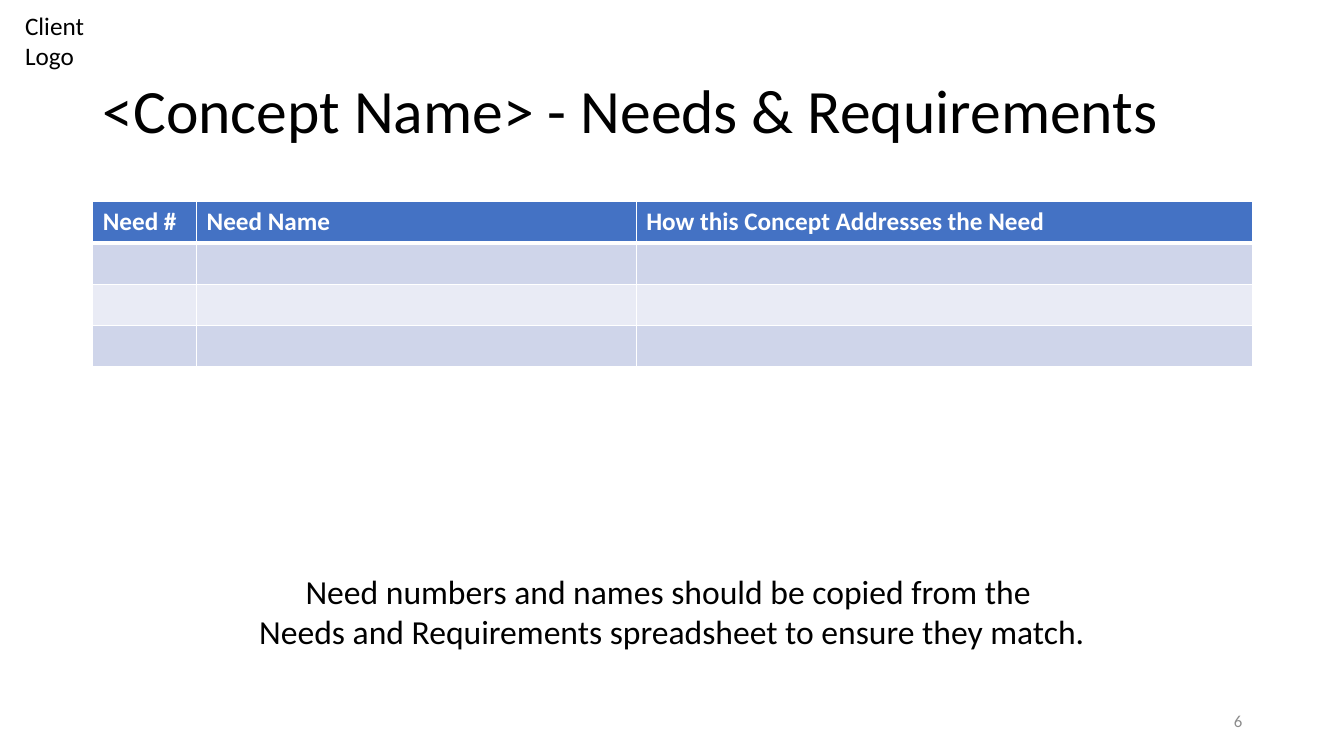
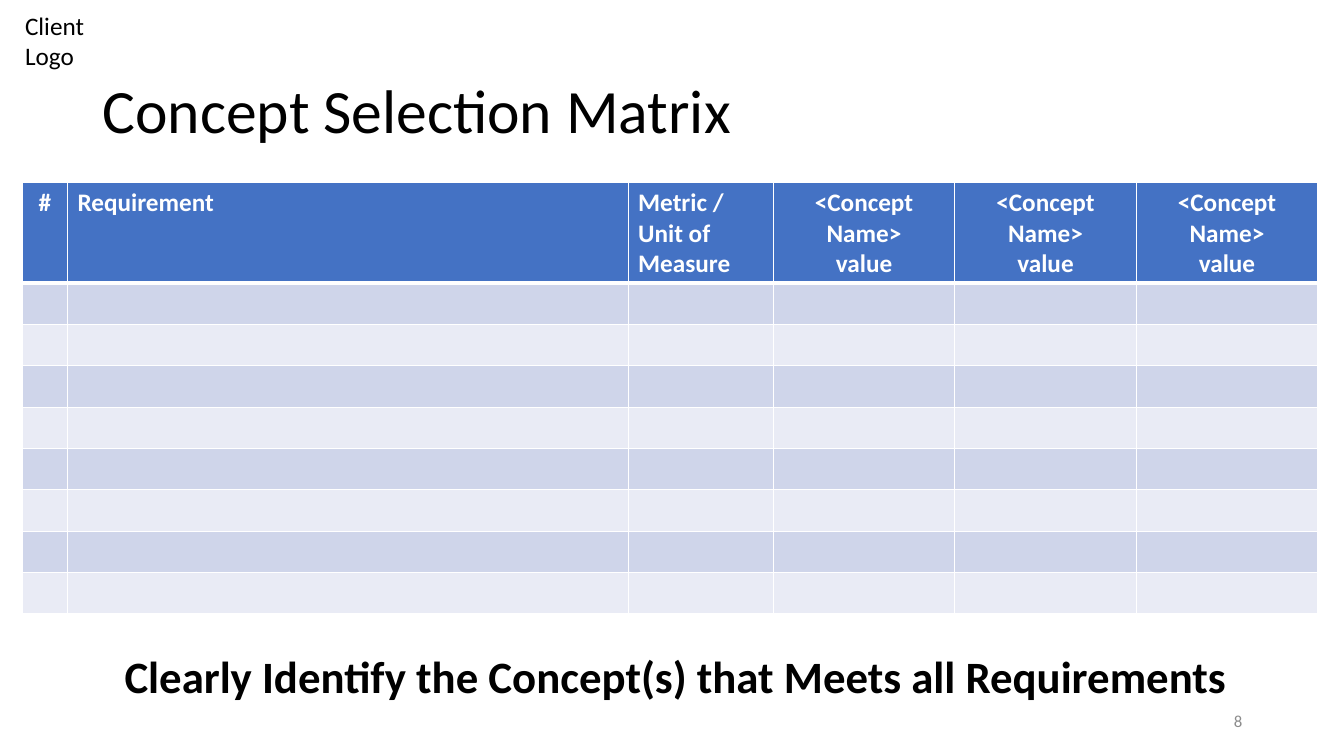
from lxml import etree
from pptx import Presentation
from pptx import util as u
from pptx.dml.color import RGBColor
from pptx.enum import text
from pptx.oxml.ns import qn

BLACK, WHITE, GREY = "000000", "FFFFFF", "8C8C8C"
HEADER, BANDS = "4472C4", ("CFD5EA", "E9EBF5")
FONT = "Calibri"
ROW_HEIGHT = 0.41
LEFT, CENTER, RIGHT = (text.PP_ALIGN.LEFT, text.PP_ALIGN.CENTER,
                       text.PP_ALIGN.RIGHT)
TOP, MIDDLE = text.MSO_ANCHOR.TOP, text.MSO_ANCHOR.MIDDLE


def rgb(color):
    return RGBColor.from_string(color)


def write(tf, content, size=18, color=BLACK, bold=False, align=LEFT,
          line_spacing=None):
    """Fill a text frame; \\n starts a paragraph, \\v breaks a line."""
    for i, line in enumerate(content.split("\n")):
        p = tf.add_paragraph() if i else tf.paragraphs[0]
        p.text = line
        p.alignment = align
        p.line_spacing = line_spacing
        for r in p.runs:
            r.font.name, r.font.size, r.font.bold = FONT, u.Pt(size), bold
            r.font.color.rgb = rgb(color)


def set_borders(cell, **widths):
    """Draw white cell borders; widths in points, keyed by side."""
    tcPr = cell._tc.get_or_add_tcPr()
    for side in ("L", "R", "T", "B"):
        ln = etree.SubElement(tcPr, qn("a:ln" + side),
                              w=str(u.Pt(widths.get(side, 1))))
        fill = etree.SubElement(ln, qn("a:solidFill"))
        etree.SubElement(fill, qn("a:srgbClr"), val=WHITE)


class Deck:
    def __init__(self):
        self.prs = Presentation()
        self.prs.slide_width = u.Inches(13.33)
        self.prs.slide_height = u.Inches(7.5)
        self.s = None

    def slide(self, title, number):
        """Start a slide with the shared client label, title and number."""
        self.s = self.prs.slides.add_slide(self.prs.slide_layouts[6])
        self.text(0.15, 0.05, 1.11, 0.71, "Client\vLogo")
        self.text(0.92, 0.4, 11.5, 1.45, title, anchor=MIDDLE, size=44,
                  line_spacing=0.9)
        self.text(9.42, 6.95, 3, 0.4, str(number), anchor=MIDDLE, size=12,
                  color=GREY, align=RIGHT)

    def text(self, x, y, w, h, content, anchor=TOP, **style):
        sp = self.s.shapes.add_textbox(*map(u.Inches, (x, y, w, h)))
        tf = sp.text_frame
        tf.word_wrap = True
        tf.vertical_anchor = anchor
        write(tf, content, **style)

    def table(self, x, y, columns, body_rows):
        """Add a banded table; columns are (heading, width, alignment)."""
        rows = body_rows + 1
        width = sum(column[1] for column in columns)
        table = self.s.shapes.add_table(
            rows, len(columns), u.Inches(x), u.Inches(y),
            u.Inches(width), u.Inches(rows * ROW_HEIGHT)).table
        table.horz_banding = False
        for c, (heading, col_width, align) in enumerate(columns):
            table.columns[c].width = u.Inches(col_width)
            write(table.cell(0, c).text_frame, heading, color=WHITE,
                  bold=True, align=align)
            for r in range(rows):
                cell = table.cell(r, c)
                set_borders(cell, T=3 if r == 1 else 1, B=3 if r == 0 else 1)
                cell.fill.solid()
                cell.fill.fore_color.rgb = rgb(
                    BANDS[(r - 1) % 2] if r else HEADER)


def main():
    deck = Deck()

    deck.slide("<Concept Name> - Needs & Requirements", 6)
    deck.table(0.92, 2, [
        ("Need #", 1.03, LEFT),
        ("Need Name", 4.36, LEFT),
        ("How this Concept Addresses the Need", 6.11, LEFT),
    ], body_rows=3)
    deck.text(1.41, 5.61, 10.51, 0.91,
              "Need numbers and names should be copied from the \v"
              "Needs and Requirements spreadsheet to ensure they match.",
              size=24, align=CENTER)

    deck.slide("Concept Selection Matrix", 8)
    concept = ("<Concept Name>\nvalue", 1.8, CENTER)
    deck.table(0.22, 1.81, [
        ("#", 0.45, CENTER),
        ("Requirement", 5.56, LEFT),
        ("Metric / \vUnit of Measure", 1.44, LEFT),
        *[concept] * 3,
    ], body_rows=8)
    deck.text(0.77, 6.39, 11.87, 0.64,
              "Clearly Identify the Concept(s) that Meets all Requirements",
              size=32, bold=True, align=CENTER)

    deck.prs.save("out.pptx")


if __name__ == "__main__":
    main()
